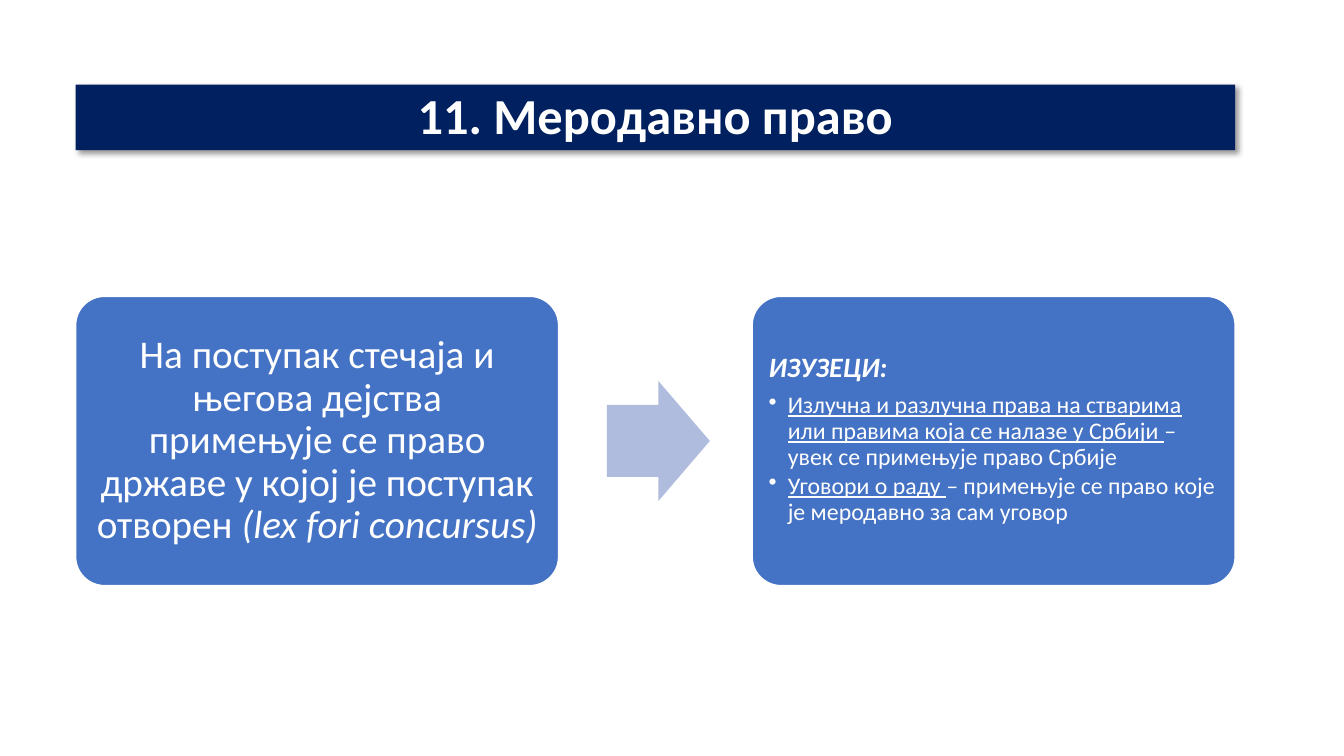
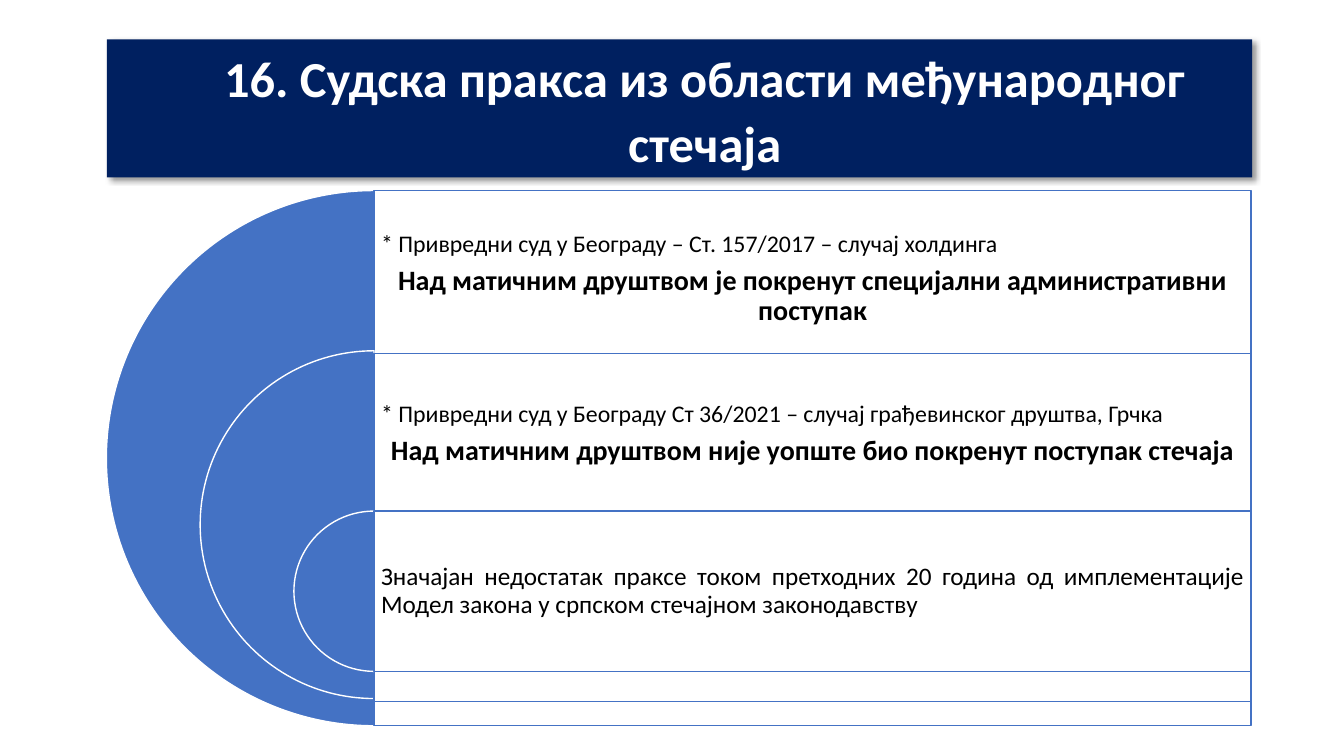
from dataclasses import dataclass
from typing import Optional

from lxml.etree import SubElement
from pptx import Presentation
from pptx.dml.color import RGBColor
from pptx.enum.shapes import MSO_SHAPE
from pptx.enum.text import MSO_ANCHOR, MSO_AUTO_SIZE, PP_ALIGN
from pptx.oxml.ns import qn
from pptx.util import Inches, Pt

FONT = "Calibri"
NAVY = RGBColor(0x00, 0x20, 0x60)
BLUE = RGBColor(0x44, 0x72, 0xC4)
PALE_BLUE = RGBColor(0xB0, 0xBC, 0xDE)
WHITE = RGBColor(0xFF, 0xFF, 0xFF)
BLACK = RGBColor(0x00, 0x00, 0x00)

CARD_TOP, CARD_WIDTH, CARD_HEIGHT = 2.94, 4.79, 2.87
RING_TOP, RING_SIZE, RING_CENTER = 1.89, 5.31, 3.71
ROW_HEIGHT, RING_SHRINK, ROW_WIDTH = 1.59, 1.86, 8.7
ROW_INSET = 0.07


@dataclass(frozen=True)
class Box:
    left: float
    top: float
    width: float
    height: float


@dataclass(frozen=True)
class Insets:
    left: float
    top: float
    right: float
    bottom: float


@dataclass(frozen=True)
class TextRun:
    text: str
    bold: bool = False
    italic: bool = False
    underline: bool = False


@dataclass(frozen=True)
class TextLine:
    runs: tuple[TextRun, ...]
    size: float
    align: PP_ALIGN = PP_ALIGN.LEFT
    after: float = 0.35
    bullet: bool = False


@dataclass(frozen=True)
class Card:
    left: float
    lines: tuple[TextLine, ...]
    inset: float
    anchor: MSO_ANCHOR = MSO_ANCHOR.MIDDLE
    top_inset: Optional[float] = None


@dataclass(frozen=True)
class Row:
    lines: tuple[TextLine, ...]
    anchor: MSO_ANCHOR = MSO_ANCHOR.MIDDLE
    top_inset: float = ROW_INSET
    nudge: float = 0


CARDS = (
    Card(0.75, (
        TextLine((
            TextRun("На поступак стечаја и његова дејства примењује се право државе у којој је поступак отворен "),
            TextRun("(lex fori concursus)", italic=True),
        ), 28, PP_ALIGN.CENTER),
    ), 0.12),
    Card(7.46, (
        TextLine((TextRun("ИЗУЗЕЦИ:", bold=True, italic=True),), 20),
        TextLine((
            TextRun("Излучна и разлучна права на стварима или правима која се налазе у Србији ", underline=True),
            TextRun("– увек се примењује право Србије"),
        ), 17, after=0.15, bullet=True),
        TextLine((
            TextRun("Уговори о раду ", underline=True),
            TextRun("– примењује се право које је меродавно за сам уговор"),
        ), 17, after=0.15, bullet=True),
    ), 0.08, MSO_ANCHOR.TOP, 0.48),
)

ROWS = (
    Row((
        TextLine((TextRun("* Привредни суд у Београду – Ст. 157/2017 – случај холдинга"),), 17),
        TextLine((TextRun("Над матичним друштвом је покренут специјални административни поступак", bold=True),),
                 20, PP_ALIGN.CENTER),
    ), MSO_ANCHOR.TOP, 0.41),
    Row((
        TextLine((TextRun("* Привредни суд у Београду Ст 36/2021 – случај грађевинског друштва, Грчка"),),
                 17, PP_ALIGN.JUSTIFY),
        TextLine((TextRun("Над матичним друштвом није уопште био покренут поступак стечаја", bold=True),),
                 20, PP_ALIGN.CENTER),
    ), nudge=0.03),
    Row((
        TextLine((TextRun("Значајан недостатак праксе током претходних 20 година од имплементације "
                          "Модел закона у српском стечајном законодавству"),), 18, PP_ALIGN.JUSTIFY),
    )),
)


def add_run(paragraph, run: TextRun, size: float, color: RGBColor) -> None:
    text_run = paragraph.add_run()
    text_run.text = run.text
    font = text_run.font
    font.name, font.size = FONT, Pt(size)
    font.bold, font.italic, font.underline = run.bold, run.italic, run.underline
    font.color.rgb = color


def add_bullet(paragraph) -> None:
    properties = paragraph._p.get_or_add_pPr()
    properties.set("marL", str(Inches(0.19)))
    properties.set("indent", str(Inches(-0.19)))
    SubElement(properties, qn("a:buChar"), char="•")


def write_lines(shape, lines: tuple[TextLine, ...], color: RGBColor,
                insets: Insets, anchor: MSO_ANCHOR) -> None:
    frame = shape.text_frame
    frame.word_wrap = True
    frame.vertical_anchor = anchor
    frame.margin_left, frame.margin_top = Inches(insets.left), Inches(insets.top)
    frame.margin_right, frame.margin_bottom = Inches(insets.right), Inches(insets.bottom)
    for index, line in enumerate(lines):
        paragraph = frame.add_paragraph() if index else frame.paragraphs[0]
        paragraph.alignment = line.align
        paragraph.line_spacing = 0.9
        paragraph.space_after = Pt(round(line.size * line.after, 1))
        if line.bullet:
            add_bullet(paragraph)
        for run in line.runs:
            add_run(paragraph, run, line.size, color)


def add_block(slide, kind: MSO_SHAPE, box: Box, fill: RGBColor,
              line: Optional[RGBColor] = None, adjustments: tuple[float, ...] = ()):
    shape = slide.shapes.add_shape(kind, Inches(box.left), Inches(box.top),
                                   Inches(box.width), Inches(box.height))
    shape.shadow.inherit = False
    shape.fill.solid()
    shape.fill.fore_color.rgb = fill
    if line is None:
        shape.line.fill.background()
    else:
        shape.line.color.rgb = line
        shape.line.width = Pt(1)
    for index, value in enumerate(adjustments):
        shape.adjustments[index] = value
    return shape


def add_title_shadow(title) -> None:
    effects = SubElement(title._element.spPr, qn("a:effectLst"))
    shadow = SubElement(effects, qn("a:outerShdw"), blurRad=str(Pt(4)), dist=str(Pt(3)),
                        dir="2700000", algn="tl", rotWithShape="0")
    color = SubElement(shadow, qn("a:srgbClr"), val=str(BLACK))
    SubElement(color, qn("a:alpha"), val="40000")


def add_titled_slide(presentation, text: str, box: Box, spacing: float, indent: float = 0):
    slide = presentation.slides.add_slide(presentation.slide_layouts[5])
    title = slide.shapes.title
    title.left, title.top = Inches(box.left), Inches(box.top)
    title.width, title.height = Inches(box.width), Inches(box.height)
    title.fill.solid()
    title.fill.fore_color.rgb = NAVY
    add_title_shadow(title)
    frame = title.text_frame
    frame.word_wrap = True
    frame.auto_size = MSO_AUTO_SIZE.NONE
    frame.vertical_anchor = MSO_ANCHOR.BOTTOM
    paragraph = frame.paragraphs[0]
    paragraph.alignment = PP_ALIGN.CENTER
    paragraph.line_spacing = spacing
    paragraph._p.get_or_add_pPr().set("marL", str(Inches(indent)))
    add_run(paragraph, TextRun(text, bold=True), 36, WHITE)
    return slide


def build_applicable_law(presentation) -> None:
    slide = add_titled_slide(presentation, "11. Меродавно право", Box(0.75, 0.84, 11.5, 0.65), 0.9)
    for card in CARDS:
        shape = add_block(slide, MSO_SHAPE.ROUNDED_RECTANGLE,
                          Box(card.left, CARD_TOP, CARD_WIDTH, CARD_HEIGHT), BLUE, WHITE, (0.1,))
        insets = Insets(card.inset, card.top_inset or card.inset, card.inset, card.inset)
        write_lines(shape, card.lines, WHITE, insets, card.anchor)
    add_block(slide, MSO_SHAPE.RIGHT_ARROW, Box(6.02, 3.78, 1.02, 1.19), PALE_BLUE,
              adjustments=(0.6, 0.5))


def build_case_law(presentation) -> None:
    slide = add_titled_slide(presentation, "16. Судска пракса из области међународног стечаја",
                             Box(1.06, 0.39, 11.36, 1.37), 1.07, 0.5)
    for index, row in enumerate(ROWS):
        size = RING_SIZE - index * RING_SHRINK
        top = RING_TOP + index * ROW_HEIGHT
        add_block(slide, MSO_SHAPE.PIE, Box(RING_CENTER - size / 2, top, size, size),
                  BLUE, WHITE, (54, 162))
        panel = add_block(slide, MSO_SHAPE.RECTANGLE,
                          Box(RING_CENTER, top + row.nudge, ROW_WIDTH, size), WHITE, BLUE)
        insets = Insets(ROW_INSET, row.top_inset, ROW_INSET, size - ROW_HEIGHT + ROW_INSET)
        write_lines(panel, row.lines, BLACK, insets, row.anchor)


def main() -> None:
    presentation = Presentation()
    presentation.slide_width = Inches(13.33)
    presentation.slide_height = Inches(7.5)
    build_applicable_law(presentation)
    build_case_law(presentation)
    presentation.save("out.pptx")


if __name__ == "__main__":
    main()
